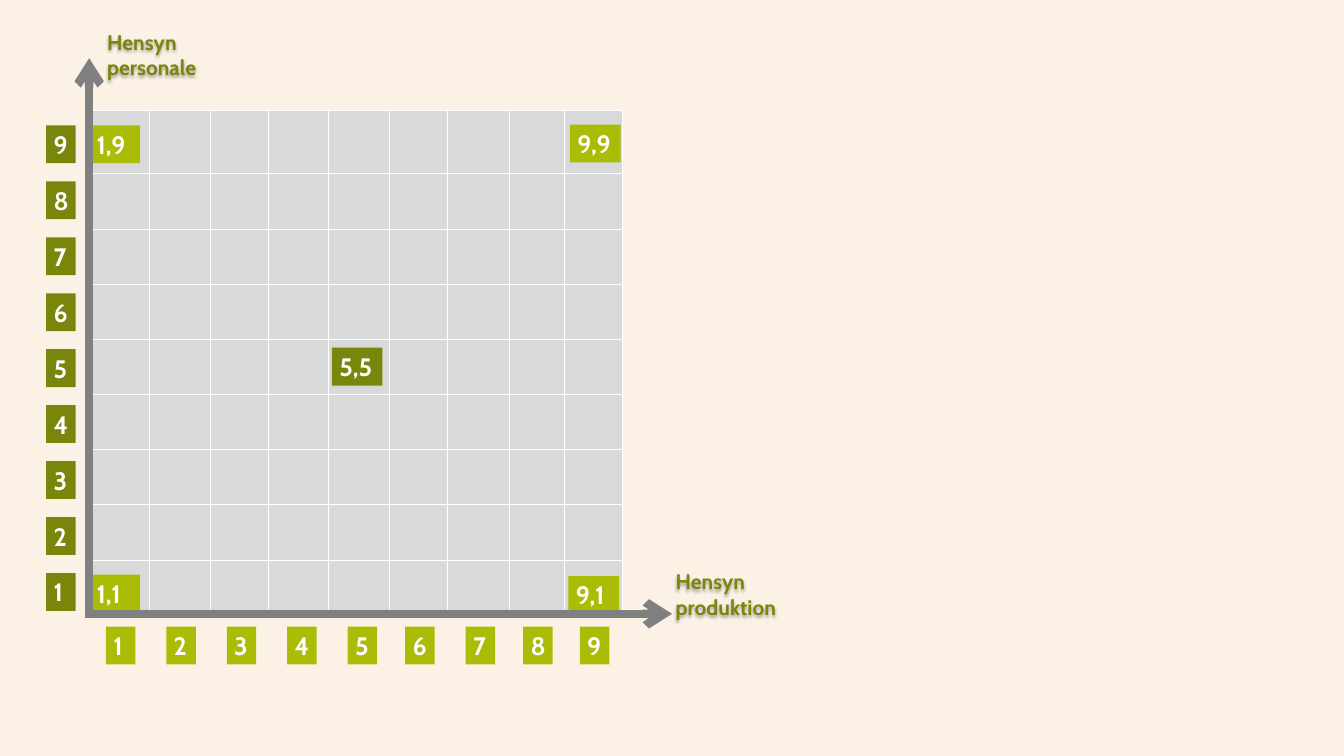
"""Builds a 9 x 9 leadership grid: concern for staff against concern for production."""
from pptx import Presentation
from pptx.dml.color import RGBColor
from pptx.enum.shapes import MSO_CONNECTOR as CONN, MSO_SHAPE as SHAPE
from pptx.enum.text import MSO_ANCHOR as ANCHOR, MSO_AUTO_SIZE as AUTO, PP_ALIGN as ALIGN
from pptx.oxml import parse_xml
from pptx.oxml.ns import nsdecls
from pptx.util import Inches, Pt

WIDTH, HEIGHT = 17.78, 10
CREAM = RGBColor(0xFB, 0xF2, 0xE5)
LIGHT = RGBColor(0xD9, 0xD9, 0xD9)
GREY = RGBColor(0x80, 0x80, 0x80)
LIME = RGBColor(0xAB, 0xBC, 0x06)
OLIVE = RGBColor(0x7A, 0x85, 0x0B)
WHITE = RGBColor(0xFF, 0xFF, 0xFF)
FONT = "Cabin"

COLUMNS = (8.2, 8, 7.7, 8, 8, 7.7, 8.2, 7.3, 7.7)
ROWS = (8.4,) + (7.3,) * 8
PRODUCTION_LEFTS = (14, 22, 30, 38, 46, 53.6, 61.6, 69.2, 76.7)
STAFF_BOTTOM, STAFF_STEP = 75.8, 7.4
SCORES = (
    ("9,9", 75.4, 16.5, LIME),
    ("9,1", 75.2, 76.2, LIME),
    ("1,9", 11.8, 16.6, LIME),
    ("1,1", 11.8, 76, LIME),
)
SHADOW = (
    f'<a:effectLst {nsdecls("a")}><a:outerShdw blurRad="40000" dist="23000" dir="5400000" '
    'rotWithShape="0"><a:srgbClr val="000000"><a:alpha val="35000"/></a:srgbClr>'
    '</a:outerShdw></a:effectLst>'
)


def share(percent):
    """Return a length given as a percentage of the slide height."""
    return Inches(HEIGHT * percent / 100)


def add_grid(s, left, top):
    """Add the grey grid, whose white rules come from the table style."""
    frame = s.shapes.add_table(len(ROWS), len(COLUMNS), share(left), share(top),
                               share(sum(COLUMNS)), share(sum(ROWS)))
    table = frame.table
    for column, width in zip(table.columns, COLUMNS):
        column.width = share(width)
    for row, height in zip(table.rows, ROWS):
        row.height = share(height)
    for cell in table.iter_cells():
        cell.fill.solid()
        cell.fill.fore_color.rgb = LIGHT


def write(p, text, size, color):
    """Write one bold, left-aligned run."""
    p.alignment = ALIGN.LEFT
    r = p.add_run()
    r.text = text
    r.font.name, r.font.size, r.font.bold = FONT, Pt(size), True
    r.font.color.rgb = color


def add_tile(s, text, left, top, fill, width=3.9):
    """Add a filled tile with a white score."""
    sp = s.shapes.add_shape(SHAPE.RECTANGLE, share(left), share(top), share(width), share(5))
    sp.shadow.inherit = False
    sp.fill.solid()
    sp.fill.fore_color.rgb = fill
    sp.line.fill.background()
    tf = sp.text_frame
    tf.word_wrap, tf.auto_size = False, AUTO.SHAPE_TO_FIT_TEXT
    tf.vertical_anchor = ANCHOR.TOP
    write(tf.paragraphs[0], text, 24, WHITE)


def add_axis(s, x1, y1, x2, y2):
    """Add a thick grey axis with an open arrowhead at its end."""
    line = s.shapes.add_connector(CONN.STRAIGHT, share(x1), share(y1), share(x2), share(y2))
    line.line.color.rgb = GREY
    line.line.width = Pt(8)
    line.line._get_or_add_ln().append(parse_xml(f'<a:tailEnd {nsdecls("a")} type="arrow"/>'))
    line._element.spPr.append(parse_xml(f'<a:effectLst {nsdecls("a")}/>'))


def add_axis_title(s, lines, left, top):
    """Add an axis title with a soft shadow, one paragraph a line."""
    sp = s.shapes.add_shape(SHAPE.ROUNDED_RECTANGLE, share(left), share(top),
                            share(21.9), share(8))
    sp.fill.background()
    sp.line.fill.background()
    sp._element.spPr.append(parse_xml(SHADOW))
    tf = sp.text_frame
    tf.word_wrap, tf.vertical_anchor = True, ANCHOR.MIDDLE
    for i, text in enumerate(lines):
        p = tf.add_paragraph() if i else tf.paragraphs[0]
        write(p, text, 20, OLIVE)


def main():
    """Build and save the slide."""
    prs = Presentation()
    prs.slide_width, prs.slide_height = Inches(WIDTH), Inches(HEIGHT)
    s = prs.slides.add_slide(prs.slide_layouts[6])
    s.background.fill.solid()
    s.background.fill.fore_color.rgb = CREAM
    add_grid(s, 11.6, 14.6)
    add_axis_title(s, ("Hensyn", "produktion"), 88, 74.6)
    for i, left in enumerate(PRODUCTION_LEFTS):
        add_tile(s, str(i + 1), left, 82.9, LIME)
    for i in range(len(ROWS)):
        add_tile(s, str(i + 1), 6.1, STAFF_BOTTOM - i * STAFF_STEP, OLIVE)
    for text, left, top, fill in SCORES:
        add_tile(s, text, left, top, fill, 6.7)
    add_axis(s, 11.8, 81.2, 88.9, 81.2)
    add_axis(s, 11.8, 81.7, 11.8, 7.7)
    add_tile(s, "5,5", 43.9, 46, OLIVE, 6.7)
    add_axis_title(s, ("Hensyn", "personale"), 12.8, 3.2)
    prs.save("out.pptx")


if __name__ == "__main__":
    main()
